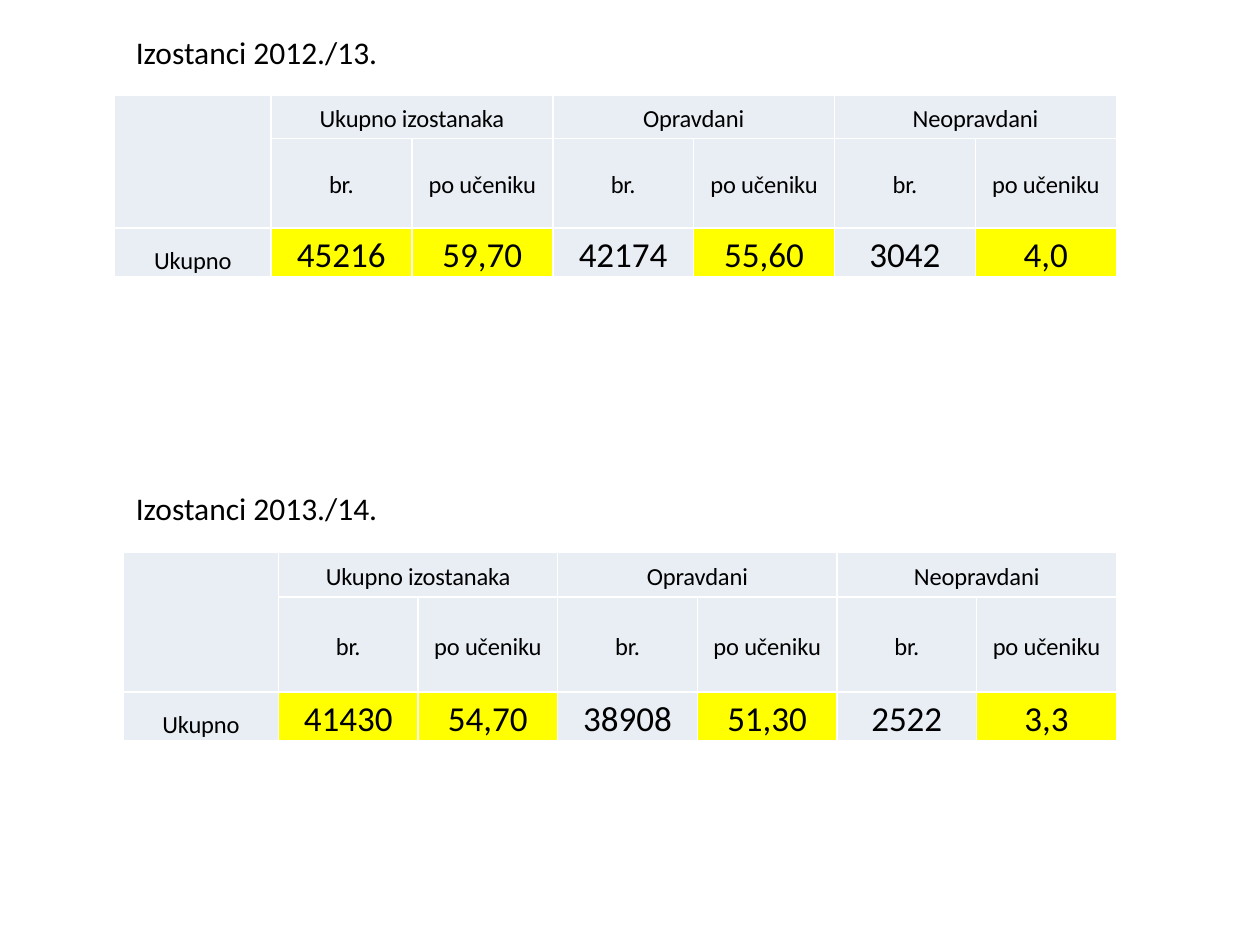
from dataclasses import dataclass

from lxml import etree
from pptx import Presentation
from pptx import util as u
from pptx.dml.color import RGBColor
from pptx.enum import text
from pptx.oxml import ns

SLIDE_WIDTH, SLIDE_HEIGHT = u.Inches(10), u.Inches(7.5)
GRID_STEPS = 100
COLORS = {"text": "000000", "cell": "E9EDF4", "highlight": "FFFF00", "border": "FFFFFF"}
FONT = "Calibri"
GROUPS = ("Ukupno izostanaka", "Opravdani", "Neopravdani")
MEASURES = ("br.", "po učeniku")
COLUMN_SHARES = (1.11,) + (1,) * 6
ROW_SHARES = (1, 2.09, 1)
HIGHLIGHTED_COLUMNS = (1, 2, 4, 6)
CAPTION_LEFT, CAPTION_WIDTH, CAPTION_HEIGHT = 9.8, 29.1, 5.33
TABLE_RIGHT = 88.6


@dataclass(frozen=True)
class AbsenceTable:
    caption: str
    caption_top: float
    left: float
    top: float
    row_unit: float
    totals: tuple[str, ...]


TABLES = (
    AbsenceTable("Izostanci 2012./13.", 2.8, 9.1, 10.13, 4.53,
                 ("45216", "59,70", "42174", "55,60", "3042", "4,0")),
    AbsenceTable("Izostanci 2013./14.", 51.07, 9.8, 58.4, 4.8,
                 ("41430", "54,70", "38908", "51,30", "2522", "3,3")),
)


def across(columns: float) -> int:
    return round(SLIDE_WIDTH * columns / GRID_STEPS)


def down(rows: float) -> int:
    return round(SLIDE_HEIGHT * rows / GRID_STEPS)


def format_runs(paragraph, size: int, spacing: int = 0) -> None:
    for run in paragraph.runs:
        run.font.name = FONT
        run.font.size = u.Pt(size)
        run.font.color.rgb = RGBColor.from_string(COLORS["text"])
        if spacing:
            run.font._element.set("spc", str(spacing))


def draw_caption(slide, table: AbsenceTable) -> None:
    shape = slide.shapes.add_textbox(across(CAPTION_LEFT), down(table.caption_top),
                                     across(CAPTION_WIDTH), down(CAPTION_HEIGHT))
    shape.text_frame.word_wrap = True
    shape.text_frame.auto_size = text.MSO_AUTO_SIZE.SHAPE_TO_FIT_TEXT
    shape.text_frame.text = table.caption
    format_runs(shape.text_frame.paragraphs[0], 18)


def draw_borders(cell) -> None:
    properties = cell._tc.get_or_add_tcPr()
    for side in ("lnL", "lnR", "lnT", "lnB"):
        line = etree.SubElement(properties, ns.qn(f"a:{side}"), w=str(u.Pt(1)))
        fill = etree.SubElement(line, ns.qn("a:solidFill"))
        etree.SubElement(fill, ns.qn("a:srgbClr"), val=COLORS["border"])


def format_cell(cell, words: str, is_total: bool, is_last_row: bool, color: str) -> None:
    draw_borders(cell)
    cell.fill.solid()
    cell.fill.fore_color.rgb = RGBColor.from_string(COLORS[color])
    cell.margin_left = cell.margin_right = u.Inches(0.07)
    cell.margin_top = cell.margin_bottom = 0
    cell.vertical_anchor = text.MSO_ANCHOR.BOTTOM if is_last_row else text.MSO_ANCHOR.MIDDLE
    if words:
        cell.text_frame.text = words
        paragraph = cell.text_frame.paragraphs[0]
        paragraph.alignment = text.PP_ALIGN.CENTER
        paragraph.line_spacing = 1.15
        format_runs(paragraph, 20 if is_total else 14, 0 if is_total else -10)


def draw_table(slide, table: AbsenceTable) -> None:
    width = TABLE_RIGHT - table.left
    column_unit = width / sum(COLUMN_SHARES)
    group_row = [""] + [words for group in GROUPS for words in (group, "")]
    rows = (group_row, ["", *MEASURES * len(GROUPS)], ["Ukupno", *table.totals])
    frame = slide.shapes.add_table(
        len(ROW_SHARES), len(COLUMN_SHARES), across(table.left), down(table.top),
        across(width), down(table.row_unit * sum(ROW_SHARES)))
    grid = frame.table
    grid.first_row = grid.horz_banding = False
    for column, share in zip(grid.columns, COLUMN_SHARES):
        column.width = across(column_unit * share)
    for row, share in zip(grid.rows, ROW_SHARES):
        row.height = down(table.row_unit * share)
    last_row = len(rows) - 1
    for row_index, row in enumerate(rows):
        for column_index, words in enumerate(row):
            is_last_row = row_index == last_row
            is_highlighted = is_last_row and column_index in HIGHLIGHTED_COLUMNS
            format_cell(grid.cell(row_index, column_index), words,
                        is_last_row and column_index > 0, is_last_row,
                        "highlight" if is_highlighted else "cell")
    grid.cell(0, 0).merge(grid.cell(1, 0))
    for first in range(1, len(COLUMN_SHARES), len(MEASURES)):
        grid.cell(0, first).merge(grid.cell(0, first + len(MEASURES) - 1))


def main() -> None:
    presentation = Presentation()
    presentation.slide_width, presentation.slide_height = SLIDE_WIDTH, SLIDE_HEIGHT
    slide = presentation.slides.add_slide(presentation.slide_layouts[6])
    for table in TABLES:
        draw_caption(slide, table)
        draw_table(slide, table)
    presentation.save("out.pptx")


if __name__ == "__main__":
    main()
